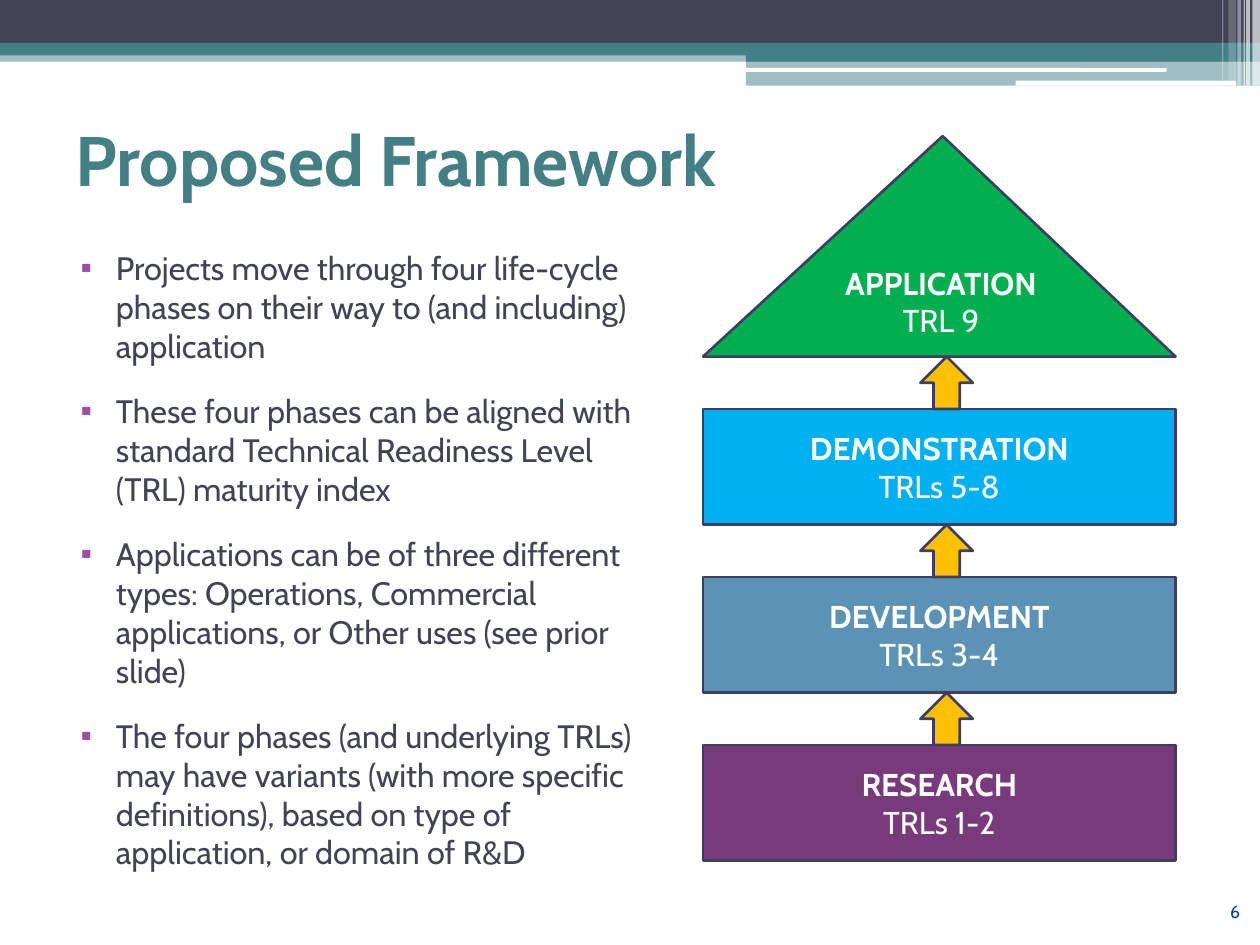
from dataclasses import dataclass

from lxml.etree import SubElement
from pptx import Presentation
from pptx.dml.color import RGBColor
from pptx.enum.shapes import MSO_SHAPE
from pptx.enum.text import MSO_ANCHOR, MSO_AUTO_SIZE, PP_ALIGN
from pptx.oxml.ns import qn
from pptx.util import Inches, Pt


@dataclass(frozen=True)
class Theme:
    """Colours, font and type sizes of the slide."""
    font: str = "Cabin"
    ink: str = "424456"
    teal: str = "438086"
    white: str = "FFFFFF"
    outline: str = "3D3E66"
    bullet: str = "A04DA3"
    number: str = "073E87"
    arrow: str = "FFC000"
    title_size: float = 40
    body_size: float = 18.5
    phase_size: float = 18
    number_size: float = 10


THEME = Theme()
WIDTH, HEIGHT = 10, 7.5

BANDS = [
    (0, 0.4, 10, 0.09, THEME.teal, 50),
    (0, 0, 10, 0.34, THEME.ink, 100),
    (0, 0.34, 10, 0.1, THEME.teal, 100),
    (5.92, 0.39, 4.08, 0.1, THEME.teal, 100),
    (5.92, 0.48, 4.08, 0.2, THEME.teal, 50),
]
RULES = [(5.91, 0.54, 3.35, 0.03), (8.06, 0.64, 1.75, 0.04)]
STRIPES = [
    (9.94, 0.06, 0.68, 65), (9.89, 0.03, 0.68, 65), (9.87, 0.01, 0.68, 60),
    (9.82, 0.03, 0.68, 40), (9.75, 0.06, 0.64, 20), (9.7, 0.01, 0.64, 30),
]
POINTS = [
    "Projects move through four life-cycle phases on their way to (and including) application",
    "These four phases can be aligned with standard Technical Readiness Level (TRL) maturity index",
    "Applications can be of three different types: Operations, Commercial applications, "
    "or Other uses (see prior slide)",
    "The four phases (and underlying TRLs) may have variants (with more specific definitions), "
    "based on type of application, or domain of R&D",
]
PHASES = [
    ("APPLICATION", "TRL 9", "00B050"),
    ("DEMONSTRATION", "TRLs 5-8", "00B0F0"),
    ("DEVELOPMENT", "TRLs 3-4", "5C92B5"),
    ("RESEARCH", "TRLs 1-2", "783A7A"),
]


def place(sp, box):
    """Move a shape to a box given in inches."""
    sp.left, sp.top, sp.width, sp.height = (Inches(v) for v in box)


def style(font, size, color, bold=False):
    """Format a font in the theme typeface."""
    font.name, font.size, font.bold = THEME.font, Pt(size), bold
    font.color.rgb = RGBColor.from_string(color)


def add_block(slide, kind, box, color, alpha=100, outlined=False):
    """Add a filled preset shape."""
    sp = slide.shapes.add_shape(kind, *(Inches(v) for v in box))
    sp.shadow.inherit = False
    sp.fill.solid()
    sp.fill.fore_color.rgb = RGBColor.from_string(color)
    if alpha < 100:
        clr = sp.fill._xPr.find(qn("a:solidFill"))[0]
        SubElement(clr, qn("a:alpha"), val=str(alpha * 1000))
    if outlined:
        sp.line.color.rgb = RGBColor.from_string(THEME.outline)
        sp.line.width = Pt(1.5)
    else:
        sp.line.fill.background()
    return sp


def add_banner(slide):
    """Draw the bands, rules and stripes along the top edge."""
    for *box, color, alpha in BANDS:
        add_block(slide, MSO_SHAPE.RECTANGLE, box, color, alpha)
    for box in RULES:
        add_block(slide, MSO_SHAPE.ROUNDED_RECTANGLE, box, THEME.white)
    for left, width, height, alpha in STRIPES:
        add_block(slide, MSO_SHAPE.RECTANGLE, (left, 0, width, height), THEME.white, alpha)


def add_title(slide, box, text):
    """Fill the title placeholder."""
    sp = slide.shapes.title
    place(sp, box)
    tf = sp.text_frame
    tf.text = text
    tf.auto_size = MSO_AUTO_SIZE.NONE
    tf.vertical_anchor = MSO_ANCHOR.MIDDLE
    tf.margin_bottom = Inches(0.36)
    p = tf.paragraphs[0]
    p.alignment = PP_ALIGN.LEFT
    style(p.runs[0].font, THEME.title_size, THEME.teal, True)


def add_points(slide, box, points):
    """Fill the body placeholder with a bulleted list."""
    sp = slide.placeholders[1]
    place(sp, box)
    tf = sp.text_frame
    tf.text = "\n".join(points)
    tf.auto_size = MSO_AUTO_SIZE.NONE
    for p in tf.paragraphs:
        p.space_before, p.space_after = Pt(3), Pt(12)
        style(p.runs[0].font, THEME.body_size, THEME.ink)
        pPr = p._p.get_or_add_pPr()
        pPr.set("marL", str(Inches(0.4)))
        pPr.set("indent", str(Inches(-0.28)))
        SubElement(SubElement(pPr, qn("a:buClr")), qn("a:srgbClr"), val=THEME.bullet)
        SubElement(pPr, qn("a:buChar"), char="▪")


def add_phase(slide, kind, box, phase):
    """Draw one phase with its name above its readiness levels."""
    name, levels, color = phase
    sp = add_block(slide, kind, box, color, outlined=True)
    tf = sp.text_frame
    tf.text = f"{name}\n{levels}"
    tf.vertical_anchor = MSO_ANCHOR.MIDDLE
    for p, bold in zip(tf.paragraphs, (True, False)):
        p.alignment = PP_ALIGN.CENTER
        style(p.runs[0].font, THEME.phase_size, THEME.white, bold)
    return sp


def add_stack(slide, box, phases):
    """Stack the phases under a triangular top, joined by upward arrows."""
    left, top, width, height = box
    unit = height / 69
    roof, block, gap = 21 * unit, 11 * unit, 5 * unit
    sp = add_phase(slide, MSO_SHAPE.ISOSCELES_TRIANGLE, (left, top, width, roof), phases[0])
    sp.adjustments[0] = 0.507
    for i, phase in enumerate(phases[1:]):
        y = top + roof + i * (block + gap)
        add_phase(slide, MSO_SHAPE.RECTANGLE, (left, y + gap, width, block), phase)
        add_block(slide, MSO_SHAPE.UP_ARROW, (left + 0.46 * width, y, gap, gap),
                  THEME.arrow, outlined=True)


def add_number(slide, box, number):
    """Write the slide number at the lower right."""
    sp = slide.shapes.add_textbox(*(Inches(v) for v in box))
    tf = sp.text_frame
    tf.word_wrap = True
    tf.text = number
    p = tf.paragraphs[0]
    p.alignment = PP_ALIGN.RIGHT
    style(p.runs[0].font, THEME.number_size, THEME.number)


def main():
    """Build and save the slide."""
    prs = Presentation()
    prs.slide_width, prs.slide_height = Inches(WIDTH), Inches(HEIGHT)
    slide = prs.slides.add_slide(prs.slide_layouts[1])
    add_banner(slide)
    add_title(slide, (0.5, 0.83, 9, 1.17), "Proposed Framework")
    add_stack(slide, (5.58, 1.08, 3.75, 5.75), PHASES)
    add_number(slide, (8.67, 7.1, 1.27, 0.4), "6")
    add_points(slide, (0.42, 1.92, 4.92, 5.11), POINTS)
    prs.save("out.pptx")


if __name__ == "__main__":
    main()
